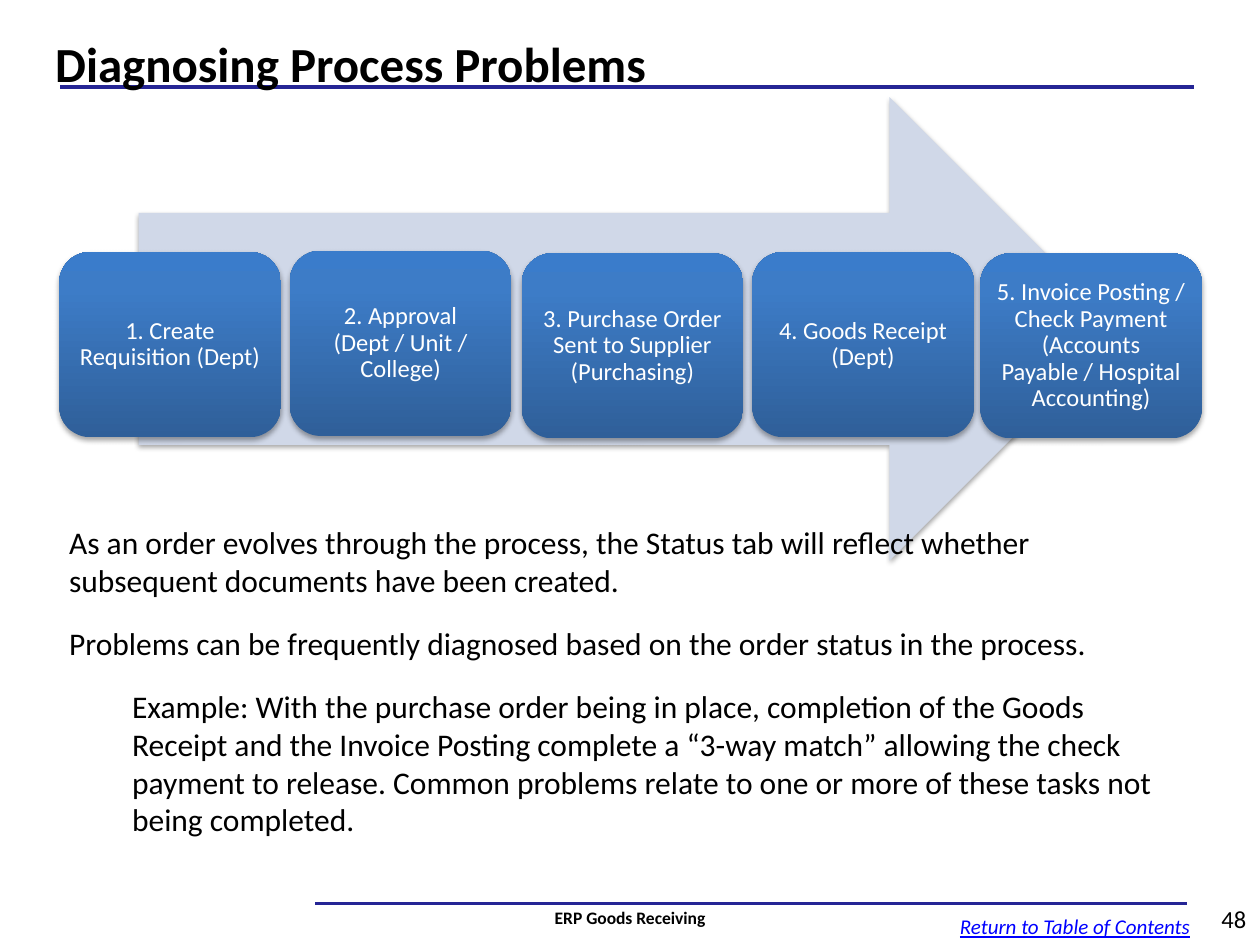
from copy import deepcopy

from lxml import etree
from pptx import Presentation
from pptx.dml.color import RGBColor
from pptx.enum.shapes import MSO_CONNECTOR as Conn, MSO_SHAPE as Shape
from pptx.enum.text import MSO_ANCHOR as Anchor, PP_ALIGN as Align
from pptx.oxml.ns import qn
from pptx.util import Inches, Pt

COLORS = {
    "rule": "252595", "arrow": "D0D8E8", "text": "000000",
    "light": "FFFFFF", "link": "0000FF", "shadow": "000000",
}
SHADES = [(0, "2F5F99"), (0.8, "3D7CC7"), (1, "3A7CCB")]
STEPS = [
    (0.47, 2.0, "1. Create Requisition (Dept)"),
    (2.3, 1.99, "2. Approval (Dept / Unit / College)"),
    (4.14, 2.01, "3. Purchase Order Sent to Supplier (Purchasing)"),
    (5.97, 2.0, "4. Goods Receipt (Dept)"),
    (7.78, 2.01, "5. Invoice Posting / Check Payment "
                 "(Accounts Payable / Hospital Accounting)"),
]
BODY = [
    "As an order evolves through the process, the Status tab will reflect "
    "whether subsequent documents have been created.",
    "Problems can be frequently diagnosed based on the order status in the "
    "process.",
    "Example: With the purchase order being in place, completion of the Goods "
    "Receipt and the Invoice Posting complete a “3-way match” allowing the "
    "check payment to release. Common problems relate to one or more of these "
    "tasks not being completed.",
]


def rgb(name):
    return RGBColor.from_string(COLORS[name])


def write(frame, *lines, size=18, color="text", bold=False, italic=False,
          under=False, align=Align.LEFT, anchor=Anchor.TOP, wrap=True,
          gap=0, spacing=1.0):
    """Fill a text frame with one paragraph per line; gap is in points."""
    frame.word_wrap = wrap
    frame.vertical_anchor = anchor
    for i, line in enumerate(lines):
        para = frame.add_paragraph() if i else frame.paragraphs[0]
        para.alignment = align
        para.line_spacing = spacing
        if i:
            para.space_before = Pt(gap)
        run = para.add_run()
        run.text = line
        font = run.font
        font.name, font.size = "Calibri", Pt(size)
        font.bold, font.italic, font.underline = bold, italic, under
        font.color.rgb = rgb(color)


def label(slide, box, *lines, **style):
    frame = slide.shapes.add_textbox(*map(Inches, box)).text_frame
    write(frame, *lines, **style)
    return frame


def rule(slide, left, right, y, width):
    line = slide.shapes.add_connector(
        Conn.STRAIGHT, Inches(left), Inches(y), Inches(right), Inches(y))
    line.line.color.rgb = rgb("rule")
    line.line.width = Pt(width)
    etree.SubElement(line.element.spPr, qn("a:effectLst"))


def block(slide, kind, box):
    """Add a shape without outline that casts a soft shadow downwards."""
    shape = slide.shapes.add_shape(kind, *map(Inches, box))
    shape.line.fill.background()
    shape.shadow.inherit = False
    effects = shape.element.spPr.find(qn("a:effectLst"))
    shadow = etree.SubElement(
        effects, qn("a:outerShdw"), blurRad=str(Pt(3.1)), dist=str(Pt(1.8)),
        dir="5400000", rotWithShape="0")
    tint = etree.SubElement(shadow, qn("a:srgbClr"), val=COLORS["shadow"])
    etree.SubElement(tint, qn("a:alpha"), val="35000")
    return shape


def shade(shape):
    """Give the shape a three-stop gradient running from bottom to top."""
    fill = shape.fill
    fill.gradient()
    fill.gradient_angle = 90
    stops = shape.element.spPr.find(qn("a:gradFill")).find(qn("a:gsLst"))
    stops.append(deepcopy(stops[-1]))
    for stop, (place, color) in zip(fill.gradient_stops, SHADES):
        stop.position = place
        stop.color.rgb = RGBColor.from_string(color)


def step(slide, left, top, text):
    shape = block(slide, Shape.ROUNDED_RECTANGLE, (left, top, 1.76, 1.47))
    shade(shape)
    frame = shape.text_frame
    frame.margin_left = frame.margin_right = Inches(0.06)
    frame.margin_top = frame.margin_bottom = Inches(0.06)
    write(frame, text, size=14, color="light", align=Align.CENTER,
          anchor=Anchor.MIDDLE, spacing=0.9)


def main():
    deck = Presentation()
    deck.slide_width, deck.slide_height = Inches(10), Inches(7.5)
    slide = deck.slides.add_slide(deck.slide_layouts[6])

    rule(slide, 0.48, 9.48, 0.69, 2.25)
    rule(slide, 2.5, 9.42, 7.17, 1.5)
    label(slide, (0.34, 0.1, 9.16, 0.8), "Diagnosing Process Problems",
          size=28, bold=True, anchor=Anchor.MIDDLE)

    arrow = block(slide, Shape.RIGHT_ARROW, (1.1, 0.77, 7.8, 3.68))
    arrow.fill.solid()
    arrow.fill.fore_color.rgb = rgb("arrow")
    for left, top, text in STEPS:
        step(slide, left, top, text)

    body = label(slide, (0.45, 4.1, 9.05, 2.63), *BODY, gap=14.5)
    body.paragraphs[-1].level = 1
    indent = body.paragraphs[-1].font  # creates the paragraph properties
    indent.size = Pt(18)
    props = body.paragraphs[-1]._p.get_or_add_pPr()
    props.set("marL", str(Inches(0.5)))
    props.set("indent", "0")

    label(slide, (7.52, 7.2, 2.04, 0.3), "Return to Table of Contents",
          size=12, color="link", italic=True, under=True, wrap=False)
    label(slide, (9.39, 7.09, 0.6, 0.4), "48", size=14, align=Align.RIGHT,
          anchor=Anchor.MIDDLE)
    label(slide, (2.01, 7.08, 5.98, 0.4), "ERP Goods Receiving", size=10,
          bold=True, align=Align.CENTER, anchor=Anchor.MIDDLE)

    deck.save("out.pptx")


if __name__ == "__main__":
    main()
